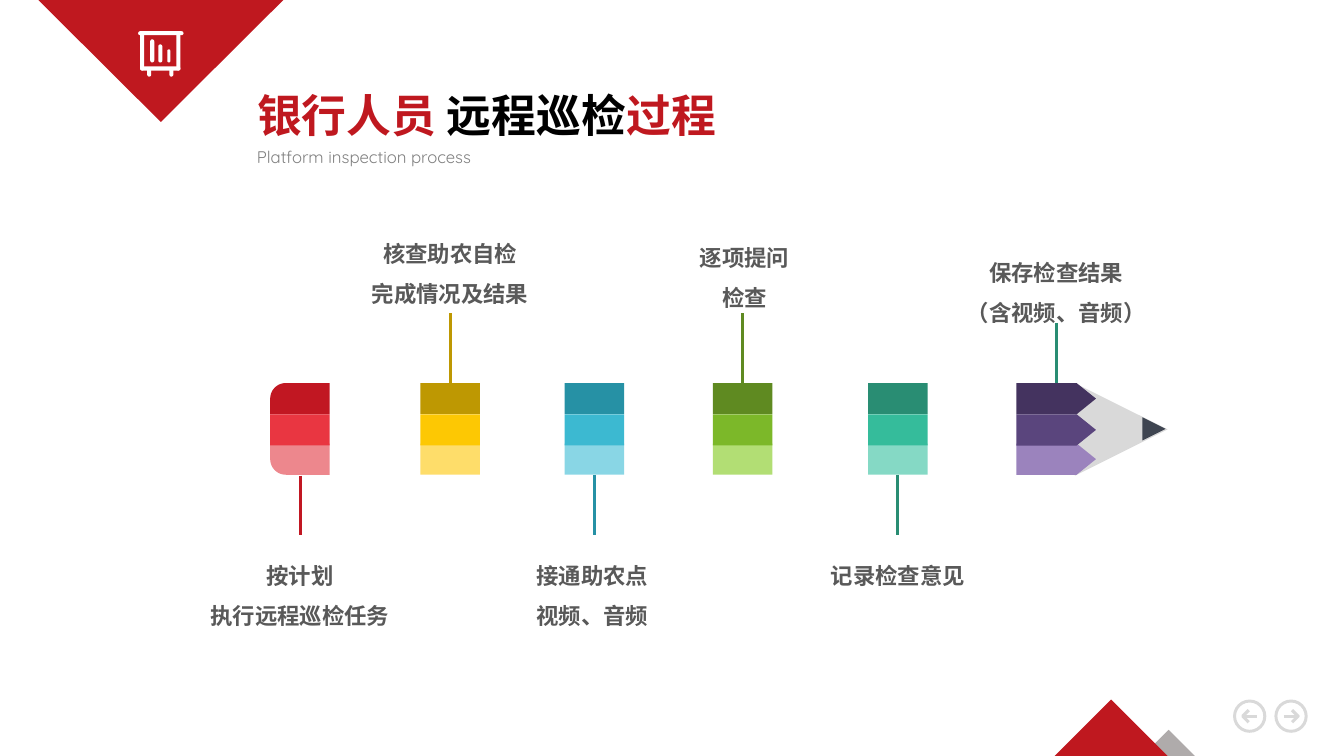
import math
from dataclasses import dataclass

from lxml import etree
from pptx import Presentation
from pptx.dml.color import RGBColor
from pptx.enum import shapes, text
from pptx.oxml import ns
from pptx.util import Inches, Pt

RED = RGBColor(0xBF, 0x18, 0x1F)
BLACK = RGBColor(0, 0, 0)
WHITE = RGBColor(0xFF, 0xFF, 0xFF)
SUBTITLE_GREY = RGBColor(0x80, 0x80, 0x80)
LABEL_GREY = RGBColor(0x59, 0x59, 0x59)
LIGHT_GREY = RGBColor(0xD9, 0xD9, 0xD9)
MID_GREY = RGBColor(0xAF, 0xAB, 0xAB)
LEAD = RGBColor(0x3F, 0x45, 0x51)
CRIMSON = RGBColor(0xC1, 0x17, 0x22)
GOLD = RGBColor(0xBE, 0x98, 0x02)
TEAL = RGBColor(0x26, 0x91, 0xA5)
OLIVE = RGBColor(0x5F, 0x8A, 0x21)
GREEN = RGBColor(0x29, 0x8D, 0x73)
PLUM = RGBColor(0x44, 0x33, 0x5F)

KIND = shapes.MSO_SHAPE
CJK_FONT = "Noto Sans CJK SC"
PENCIL_TOP, PENCIL_BOTTOM = 3.8, 4.72
BAND_TOPS = (3.8, 4.11, 4.4)
BAND_WIDTH, BAND_HEIGHT = 0.59, 0.31
LABEL_WIDTH = 2.11


@dataclass(frozen=True)
class Step:
    left: float
    bands: tuple[RGBColor, RGBColor, RGBColor]
    stem_colour: RGBColor
    stem_x: float
    stem_end: float
    label_left: float
    label_top: float
    label: str
    section: str = "body"


@dataclass(frozen=True)
class IconBar:
    left: float
    top: float
    width: float
    height: float


STEPS = (
    Step(2.68, (CRIMSON, RGBColor(0xE9, 0x36, 0x41), RGBColor(0xED, 0x87, 0x8D)), CRIMSON,
         2.98, 5.31, 1.92, 5.39, "按计划\n执行远程巡检任务", "eraser"),
    Step(4.17, (GOLD, RGBColor(0xFD, 0xC8, 0x03), RGBColor(0xFE, 0xDD, 0x6A)), GOLD,
         4.47, 3.11, 3.41, 2.2, "核查助农自检\n完成情况及结果"),
    Step(5.6, (TEAL, RGBColor(0x3C, 0xB9, 0xD1), RGBColor(0x89, 0xD6, 0xE5)), TEAL,
         5.89, 5.31, 4.82, 5.39, "接通助农点\n视频、音频"),
    Step(7.07, (OLIVE, RGBColor(0x7C, 0xB8, 0x29), RGBColor(0xB2, 0xDE, 0x74)), OLIVE,
         7.37, 3.11, 6.33, 2.24, "逐项提问\n检查"),
    Step(8.61, (GREEN, RGBColor(0x35, 0xBC, 0x9B), RGBColor(0x85, 0xD9, 0xC5)), GREEN,
         8.9, 5.31, 7.85, 5.39, "记录检查意见"),
    Step(10.08, (PLUM, RGBColor(0x5A, 0x45, 0x7D), RGBColor(0x9B, 0x83, 0xBD)), GREEN,
         10.48, 3.2, 9.42, 2.39, "保存检查结果\n（含视频、音频）", "tip"),
)

BOARD_BARS = (
    IconBar(1.37, 0.31, 0.45, 0.04), IconBar(1.39, 0.66, 0.4, 0.04),
    IconBar(1.39, 0.32, 0.04, 0.38), IconBar(1.75, 0.32, 0.04, 0.38),
    IconBar(1.46, 0.67, 0.04, 0.09), IconBar(1.68, 0.67, 0.04, 0.09),
    IconBar(1.49, 0.39, 0.04, 0.23), IconBar(1.57, 0.44, 0.04, 0.18),
    IconBar(1.66, 0.49, 0.03, 0.13),
)


def paint(shape, colour: RGBColor):
    shape.shadow.inherit = False
    shape.fill.solid()
    shape.fill.fore_color.rgb = colour
    shape.line.fill.background()
    return shape


def add_preset(slide, kind, left: float, top: float, width: float, height: float,
               colour: RGBColor, rotation: float = 0):
    shape = slide.shapes.add_shape(kind, Inches(left), Inches(top), Inches(width), Inches(height))
    shape.rotation = rotation
    return paint(shape, colour)


def add_eraser_corner(slide, left: float, top: float, at_top: bool, colour: RGBColor):
    radius = BAND_HEIGHT / 2
    arc = [(radius - radius * math.cos(math.radians(a)), radius - radius * math.sin(math.radians(a)))
           for a in range(0, 91, 6)]
    outline = [(0, BAND_HEIGHT), *arc, (BAND_WIDTH, 0), (BAND_WIDTH, BAND_HEIGHT)]
    points = [(Inches(left + x), Inches(top + (y if at_top else BAND_HEIGHT - y))) for x, y in outline]
    builder = slide.shapes.build_freeform(*points[0])
    builder.add_line_segments(points[1:])
    return paint(builder.convert_to_shape(), colour)


def add_band(slide, step: Step, row: int):
    top, colour = BAND_TOPS[row], step.bands[row]
    if step.section == "eraser" and row != 1:
        return add_eraser_corner(slide, step.left, top, row == 0, colour)
    if step.section == "tip":
        band = add_preset(slide, KIND.PENTAGON, step.left, top, 0.79, BAND_HEIGHT, colour)
        band.adjustments[0] = 0.62
        return band
    return add_preset(slide, KIND.RECTANGLE, step.left, top, BAND_WIDTH, BAND_HEIGHT, colour)


def style_run(run, size: float, font: str, colour: RGBColor, bold: bool) -> None:
    run.font.size, run.font.name, run.font.bold = Pt(size), font, bold
    run.font.color.rgb = colour
    east_asian = etree.SubElement(run.font._element, ns.qn("a:ea"))
    east_asian.set("typeface", CJK_FONT)


def add_text(slide, left: float, top: float, width: float, height: float, words: str, size: float,
             font: str, colour: RGBColor, bold: bool, alignment, spacing: float) -> None:
    box = slide.shapes.add_textbox(Inches(left), Inches(top), Inches(width), Inches(height))
    box.text_frame.word_wrap = True
    box.text_frame.text = words
    for paragraph in box.text_frame.paragraphs:
        paragraph.alignment, paragraph.line_spacing = alignment, spacing
        style_run(paragraph.runs[0], size, font, colour, bold)


def add_step(slide, step: Step) -> None:
    bottom, top, middle = (add_band(slide, step, row) for row in (2, 0, 1))
    upward = step.stem_end < PENCIL_TOP
    start = PENCIL_TOP if upward else PENCIL_BOTTOM
    stem = slide.shapes.add_connector(shapes.MSO_CONNECTOR.STRAIGHT, Inches(step.stem_x), Inches(start),
                                      Inches(step.stem_x), Inches(step.stem_end))
    if step.section == "body":
        stem.begin_connect(top if upward else bottom, 0 if upward else 2)
        stem.end_x = stem.begin_x
    stem.line.color.rgb, stem.line.width = step.stem_colour, Pt(2.25)
    etree.SubElement(stem._element.spPr, ns.qn("a:effectLst"))
    height = 0.455 * len(step.label.split("\n"))
    add_text(slide, step.label_left, step.label_top, LABEL_WIDTH, height, step.label, 16,
             CJK_FONT, LABEL_GREY, True, text.PP_ALIGN.CENTER, 1.5)


def add_nav_button(slide, left: float, direction: int) -> None:
    ring = add_preset(slide, KIND.DONUT, left, 6.94, 0.33, 0.33, LIGHT_GREY)
    ring.adjustments[0] = 0.09
    x, y = left + 0.165, 7.105

    def point(dx: float, dy: float) -> tuple[int, int]:
        return Inches(x + direction * dx), Inches(y + dy)

    builder = slide.shapes.build_freeform(*point(-0.07, 0))
    builder.add_line_segments([point(0.07, 0)], close=False)
    builder.move_to(*point(0.01, -0.06))
    builder.add_line_segments([point(0.07, 0), point(0.01, 0.06)], close=False)
    arrow = builder.convert_to_shape()
    arrow.shadow.inherit = False
    arrow.fill.background()
    arrow.line.color.rgb, arrow.line.width = LIGHT_GREY, Pt(2.25)


def add_title(slide) -> None:
    title = slide.shapes.title
    title.left, title.top, title.width, title.height = map(Inches, (2.45, 0.82, 4.81, 0.64))
    frame = title.text_frame
    frame.word_wrap, frame.vertical_anchor = False, text.MSO_ANCHOR.TOP
    frame.auto_size = text.MSO_AUTO_SIZE.NONE
    heading = frame.paragraphs[0]
    heading.alignment = text.PP_ALIGN.LEFT
    for words, colour in (("银行人员 ", RED), ("远程巡检", BLACK), ("过程", RED)):
        run = heading.add_run()
        run.text = words
        style_run(run, 32, "Arial", colour, True)


def main() -> None:
    deck = Presentation()
    deck.slide_width, deck.slide_height = Inches(13.33), Inches(7.5)
    slide = deck.slides.add_slide(deck.slide_layouts[5])
    add_title(slide)
    add_text(slide, 2.45, 1.38, 7.24, 0.31, "Platform inspection process", 12, "Quicksand",
             SUBTITLE_GREY, False, text.PP_ALIGN.LEFT, 1.14)

    triangle = KIND.ISOSCELES_TRIANGLE
    add_preset(slide, triangle, 11.33, 7.24, 0.52, 0.26, MID_GREY)
    add_preset(slide, triangle, 10.46, 6.94, 1.12, 0.56, RED)
    add_preset(slide, triangle, 0.38, 0, 2.43, 1.21, RED, 180)
    for bar in BOARD_BARS:
        rounded = add_preset(slide, KIND.ROUNDED_RECTANGLE, bar.left, bar.top, bar.width, bar.height, WHITE)
        rounded.adjustments[0] = 0.5
    add_nav_button(slide, 12.23, -1)
    add_nav_button(slide, 12.64, 1)

    add_preset(slide, triangle, 10.66, PENCIL_TOP, 0.92, 0.92, LIGHT_GREY, 90)
    add_preset(slide, triangle, 11.33, 4.14, 0.23, 0.23, LEAD, 90)
    for step in STEPS:
        add_step(slide, step)
    deck.save("out.pptx")


if __name__ == "__main__":
    main()
